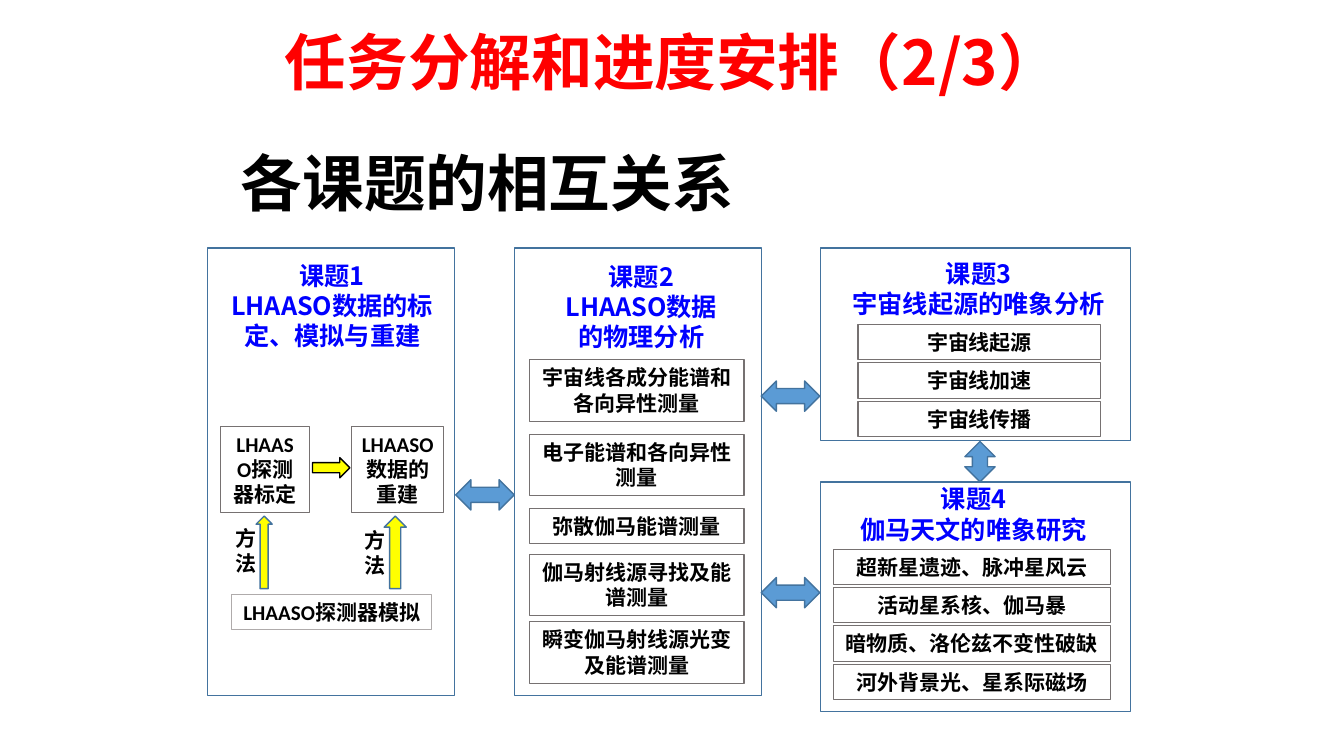
"""Build the slide on how the four research topics relate."""
from pptx import Presentation
from pptx.dml.color import RGBColor
from pptx.enum.shapes import MSO_SHAPE
from pptx.enum.text import MSO_ANCHOR, PP_ALIGN
from pptx.util import Inches, Pt

RECT, BOTH = MSO_SHAPE.RECTANGLE, MSO_SHAPE.LEFT_RIGHT_ARROW
RIGHT, UP = MSO_SHAPE.RIGHT_ARROW, MSO_SHAPE.UP_ARROW
LEFT, CENTER = PP_ALIGN.LEFT, PP_ALIGN.CENTER
TOP, MIDDLE = MSO_ANCHOR.TOP, MSO_ANCHOR.MIDDLE
LATIN, CJK = "Calibri", "Noto Sans CJK SC"
BLACK, RED, BLUE, YELLOW = "000000", "FF0000", "0000FF", "FFFF00"
EDGE, GREY, PALE, SKY = "43739E", "767171", "AFABAB", "5B9BD5"

TITLE = "任务分解和进度安排（2/3）"
SUBTITLE = "各课题的相互关系"
ROW_H, ROW_PITCH, TALL_H = 0.35, 0.38, 0.61
ARROW_W, ARROW_H = 0.58, 0.3

PANELS = [
    {"box": (2.06, 2.46, 2.45, 4.44), "head": (2.19, 2.53, 2.21, 1.01),
     "lines": ["课题1", "LHAASO数据的标定、模拟与重建"]},
    {"box": (5.1, 2.46, 2.45, 4.44), "head": (5.39, 2.54, 1.94, 1.01),
     "lines": ["课题2", "LHAASO数据的物理分析"]},
    {"box": (8.14, 2.46, 3.07, 1.91), "head": (8.27, 2.51, 2.87, 0.71),
     "lines": ["课题3", "宇宙线起源的唯象分析"]},
    {"box": (8.14, 4.78, 3.07, 2.28), "head": (8.3, 4.75, 2.71, 0.71),
     "lines": ["课题4", "伽马天文的唯象研究"]},
]
METHODS = [
    ("LHAASO探测器标定", (2.19, 4.23, 0.88, 0.86), GREY),
    ("LHAASO数据的重建", (3.49, 4.23, 0.91, 0.86), GREY),
    ("LHAASO探测器模拟", (2.3, 5.9, 1.98, ROW_H), PALE),
]
METHOD_LABELS = [(2.24, 5.16, 0.2, 0.61), (3.53, 5.18, 0.18, 0.61)]
METHOD_ARROWS = [
    (RIGHT, (3.1, 4.54, 0.37, 0.2), BLACK),
    (UP, (2.54, 5.12, 0.16, 0.72), EDGE),
    (UP, (3.81, 5.12, 0.22, 0.72), EDGE),
]
MEASUREMENTS = [
    ("宇宙线各成分能谱和各向异性测量", 3.57, TALL_H),
    ("电子能谱和各向异性测量", 4.31, TALL_H),
    ("弥散伽马能谱测量", 5.04, ROW_H),
    ("伽马射线源寻找及能谱测量", 5.5, TALL_H),
    ("瞬变伽马射线源光变及能谱测量", 6.17, TALL_H),
]
TOPIC_ROWS = [
    ((8.51, 3.22, 2.41), ["宇宙线起源", "宇宙线加速", "宇宙线传播"]),
    ((8.27, 5.45, 2.74), ["超新星遗迹、脉冲星风云", "活动星系核、伽马暴",
                          "暗物质、洛伦兹不变性破缺", "河外背景光、星系际磁场"]),
]
LINKS = [
    ((4.52, 4.76, ARROW_W, ARROW_H), 0),
    ((7.55, 3.78, ARROW_W, ARROW_H), 0),
    ((7.55, 5.73, ARROW_W, ARROW_H), 0),
    ((9.52, 4.43, 0.4, ARROW_H), 270),
]


def color(value):
    return RGBColor.from_string(value)


def write(sp, lines, size=15, font=LATIN, ink=BLACK, align=CENTER,
          anchor=TOP, spacing=None):
    tf = sp.text_frame
    tf.word_wrap = True
    tf.vertical_anchor = anchor
    tf.text = "\n".join(lines)
    for p in tf.paragraphs:
        p.alignment = align
        p.line_spacing = spacing
        for r in p.runs:
            r.font.size, r.font.bold, r.font.name = Pt(size), True, font
            r.font.color.rgb = color(ink)
            if font == CJK:
                ea = r.font._element.makeelement(
                    "{http://schemas.openxmlformats.org/drawingml/2006/main}ea",
                    {"typeface": font})
                r.font._element.append(ea)


def add_shape(s, kind, box, line, weight=1, fill=None):
    sp = s.shapes.add_shape(kind, *map(Inches, box))
    sp.shadow.inherit = False
    if fill:
        sp.fill.solid()
        sp.fill.fore_color.rgb = color(fill)
    else:
        sp.fill.background()
    sp.line.color.rgb = color(line)
    sp.line.width = Pt(weight)
    return sp


def add_text(s, box, lines, **style):
    write(s.shapes.add_textbox(*map(Inches, box)), lines, **style)


def add_item(s, text, box, line=GREY):
    write(add_shape(s, RECT, box, line, 0.75), [text])


def main():
    prs = Presentation()
    prs.slide_width, prs.slide_height = Inches(13.33), Inches(7.5)
    s = prs.slides.add_slide(prs.slide_layouts[6])

    add_text(s, (1.67, 0.15, 10, 0.84), [TITLE], size=44, font=CJK, ink=RED,
             anchor=MIDDLE, spacing=Pt(57))
    add_text(s, (2.29, 1.31, 8.62, 1.09), [SUBTITLE], size=44, align=LEFT,
             anchor=MIDDLE, spacing=0.9)

    for panel in PANELS:
        add_shape(s, RECT, panel["box"], EDGE)
        add_text(s, panel["head"], panel["lines"], size=18, font=CJK,
                 ink=BLUE, spacing=Pt(21.6))

    for text, box, line in METHODS:
        add_item(s, text, box, line)
    for kind, box, line in METHOD_ARROWS:
        add_shape(s, kind, box, line, fill=YELLOW)
    for box in METHOD_LABELS:
        add_text(s, box, ["方法"], align=LEFT)

    for text, top, height in MEASUREMENTS:
        add_item(s, text, (5.25, top, 2.13, height))
    for (left, top, width), rows in TOPIC_ROWS:
        for i, text in enumerate(rows):
            add_item(s, text, (left, top + i * ROW_PITCH, width, ROW_H))

    for box, turn in LINKS:
        add_shape(s, BOTH, box, EDGE, fill=SKY).rotation = turn

    prs.save("out.pptx")


if __name__ == "__main__":
    main()
